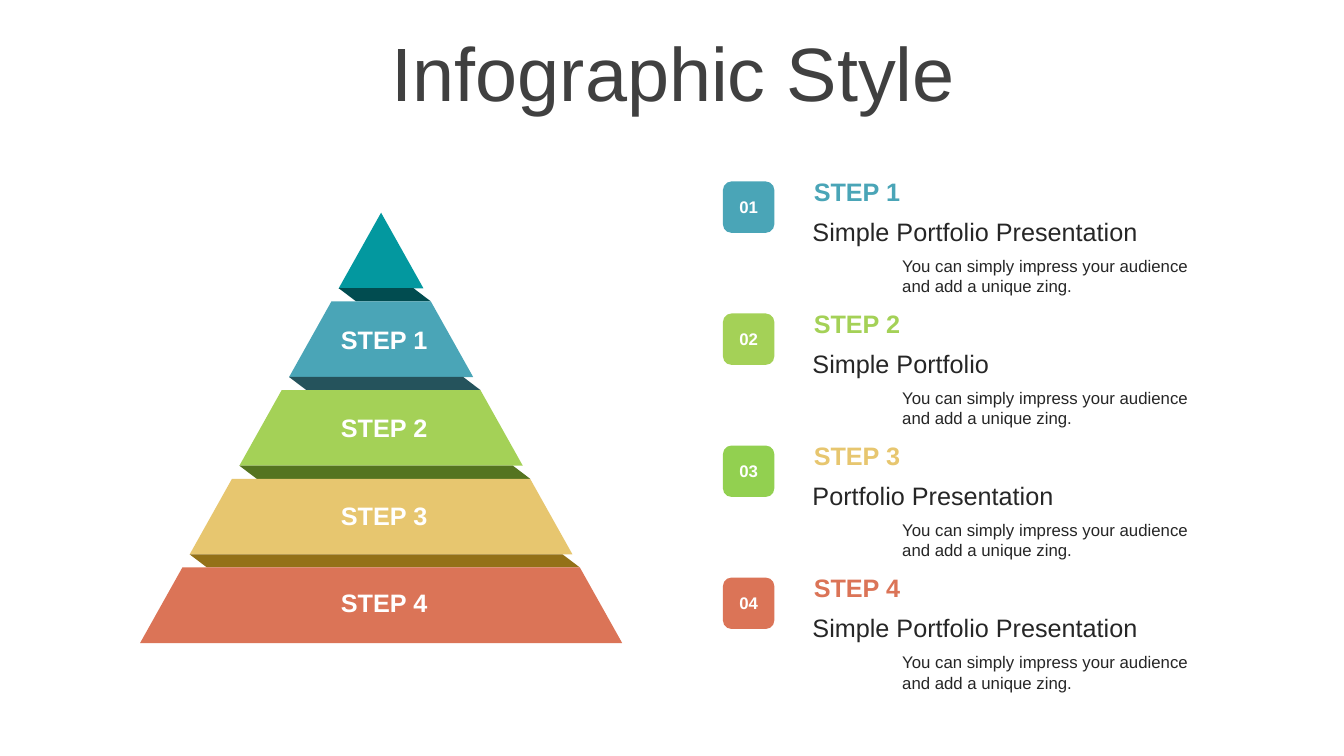
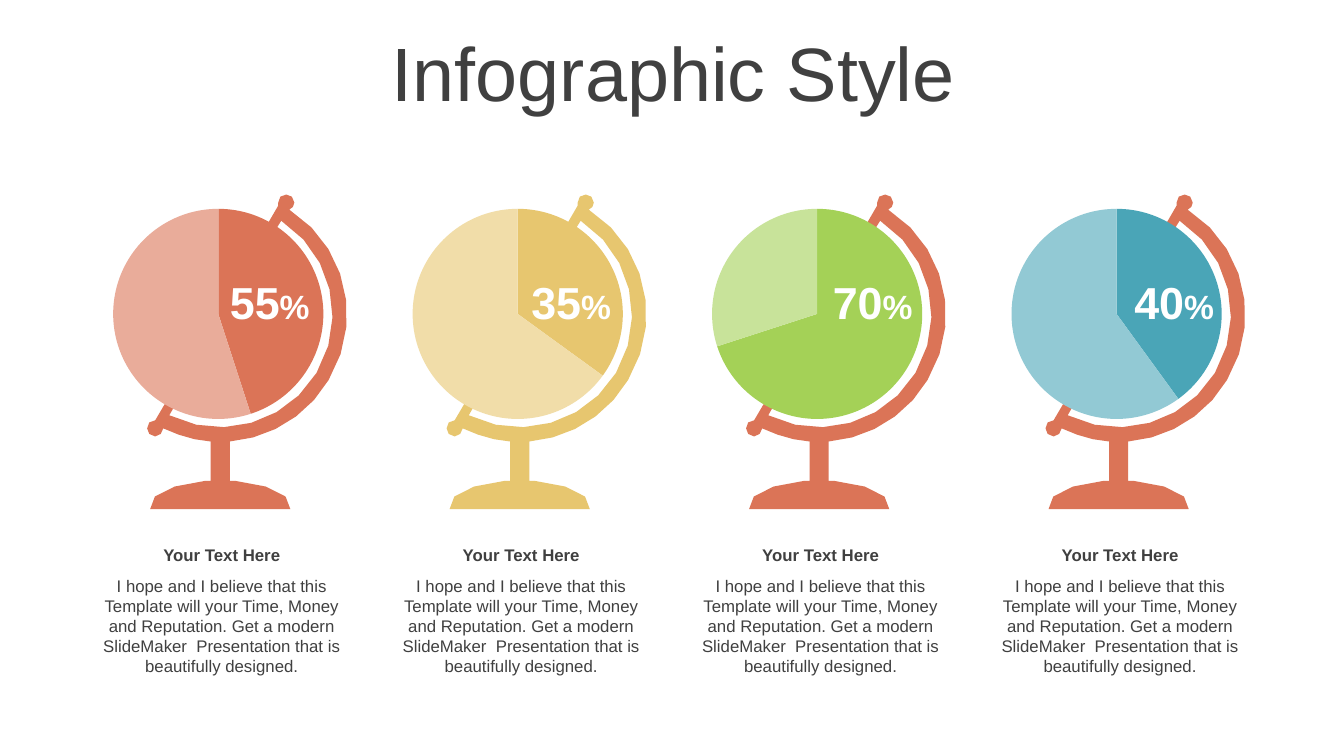
"""Build two infographic slides: a stepped pyramid and a row of globe pie charts."""
import math

import lxml.etree
import pptx
import pptx.chart.data
import pptx.dml.color
import pptx.enum.chart
import pptx.enum.shapes
import pptx.enum.text
import pptx.oxml
import pptx.oxml.ns
import pptx.util

Inches = pptx.util.Inches
Pt = pptx.util.Pt
SHAPE = pptx.enum.shapes.MSO_SHAPE
ALIGN = pptx.enum.text.PP_ALIGN
ANCHOR = pptx.enum.text.MSO_ANCHOR

FONT = "Arial"
COLORS = {
    "white": "FFFFFF", "title": "404040", "body": "262626",
    "teal": "03989F", "teal_dark": "014C50",
    "blue": "4AA5B7", "blue_dark": "25535C", "blue_light": "92C9D4",
    "green": "A4D157", "green_dark": "557420", "green_light": "C8E39A",
    "gold": "E7C66F", "gold_dark": "937118", "gold_light": "F1DDA9",
    "coral": "DB7457", "coral_light": "E9AC9A", "lime": "92D050",
}

TITLE = "Infographic Style"
TIERS = [
    ("", "teal", "teal_dark"),
    ("STEP 1", "blue", "blue_dark"),
    ("STEP 2", "green", "green_dark"),
    ("STEP 3", "gold", "gold_dark"),
    ("STEP 4", "coral", None),
]
STEPS = [
    ("01", "STEP 1", "Simple Portfolio Presentation", "blue", "blue"),
    ("02", "STEP 2", "Simple Portfolio", "green", "green"),
    ("03", "STEP 3", "Portfolio Presentation", "lime", "gold"),
    ("04", "STEP 4", "Simple Portfolio Presentation", "coral", "coral"),
]
STEP_NOTE = "You can simply impress your audience and add a unique zing."
GLOBES = [
    ("55", (45, 55), "coral", "coral_light", "coral"),
    ("35", (35, 65), "gold", "gold_light", "gold"),
    ("70", (70, 30), "green", "green_light", "coral"),
    ("40", (40, 60), "blue", "blue_light", "coral"),
]
GLOBE_HEADING = "Your Text Here"
GLOBE_NOTE = ("I hope and I believe that this Template will your Time, Money and Reputation. "
              "Get a modern SlideMaker  Presentation that is beautifully designed.")

PYRAMID_CENTER, PYRAMID_APEX, PYRAMID_SLOPE = 3.78, 2.11, 0.56
TIER_PITCH, TIER_HEIGHT = 0.88, 0.75
STEP_PITCH = 1.31
GLOBE_PITCH = 2.97

STAND = [
    (2.84, 1.93), (2.88, 1.93, 2.92, 1.96, 2.92, 2.01),
    (2.92, 2.04, 2.9, 2.07, 2.87, 2.08), (3.44, 2.44, 3.61, 3.19, 3.26, 3.77),
    (3.05, 4.13, 2.67, 4.35, 2.28, 4.38), (2.28, 4.77), (2.33, 4.77),
    (2.68, 4.8, 2.92, 4.92, 2.88, 5.05),
    (1.49, 5.05), (1.45, 4.92, 1.69, 4.8, 2.04, 4.77), (2.09, 4.77), (2.09, 4.38),
    (1.93, 4.37, 1.77, 4.32, 1.62, 4.25), (1.62, 4.29, 1.58, 4.33, 1.54, 4.33),
    (1.49, 4.33, 1.46, 4.29, 1.46, 4.25), (1.46, 4.2, 1.49, 4.17, 1.54, 4.17),
    (1.64, 4), (1.72, 4.05), (1.68, 4.12),
    (2.2, 4.38, 2.84, 4.2, 3.14, 3.7), (3.45, 3.18, 3.29, 2.51, 2.79, 2.19),
    (2.74, 2.27), (2.65, 2.23), (2.76, 2.04),
    (2.76, 2.01), (2.76, 1.96, 2.79, 1.93, 2.84, 1.93),
]


def rgb(name):
    return pptx.dml.color.RGBColor.from_string(COLORS[name])


def paint(shape, color):
    shape.shadow.inherit = False
    shape.fill.solid()
    shape.fill.fore_color.rgb = rgb(color)
    shape.line.fill.background()
    return shape


def write(para, text, size, color, bold=False, align=ALIGN.CENTER):
    para.text = text
    para.alignment = align
    para.font.name = FONT
    para.font.size = Pt(size)
    para.font.bold = bold
    para.font.color.rgb = rgb(color)


def clear_margins(frame):
    frame.margin_left = frame.margin_right = frame.margin_top = frame.margin_bottom = 0


def add_text(page, place, text, size, color, anchor=ANCHOR.TOP, **style):
    box = page.shapes.add_textbox(*map(Inches, place))
    box.text_frame.word_wrap = True
    box.text_frame.vertical_anchor = anchor
    para = box.text_frame.paragraphs[0]
    write(para, text, size, color, **style)
    return para


def add_outline(page, points, color):
    corners = [(Inches(x), Inches(y)) for x, y in points]
    builder = page.shapes.build_freeform(*corners[0])
    builder.add_line_segments(corners[1:], close=True)
    return paint(builder.convert_to_shape(), color)


def flatten(segments):
    points = [segments[0]]
    for segment in segments[1:]:
        if len(segment) == 2:
            points.append(segment)
            continue
        controls = [points[-1], segment[:2], segment[2:4], segment[4:]]
        pieces = 2 + int(3 * math.dist(controls[0], controls[3]))
        for piece in range(1, pieces + 1):
            t = piece / pieces
            weights = ((1 - t) ** 3, 3 * t * (1 - t) ** 2, 3 * t * t * (1 - t), t ** 3)
            points.append(tuple(sum(weight * control[axis] for weight, control in zip(weights, controls))
                                for axis in (0, 1)))
    return points


def add_page(deck):
    page = deck.slides.add_slide(deck.slide_layouts[6])
    para = add_text(page, (0.35, 0.37, 12.66, 0.79), TITLE, 54, "title", ANCHOR.MIDDLE)
    para.line_spacing = 0.9
    para.space_before = Pt(10)
    return page


def add_pyramid(page):
    def half_width(y):
        return (y - PYRAMID_APEX) * PYRAMID_SLOPE

    for index, (label, color, fold_color) in enumerate(TIERS):
        top = PYRAMID_APEX + index * TIER_PITCH
        bottom = top + TIER_HEIGHT
        upper, lower = half_width(top), half_width(bottom)
        corners = [(PYRAMID_CENTER - upper, top), (PYRAMID_CENTER + upper, top),
                   (PYRAMID_CENTER + lower, bottom), (PYRAMID_CENTER - lower, bottom)]
        add_outline(page, corners if upper else corners[1:], color)
        if fold_color:
            next_top = top + TIER_PITCH
            fold = page.shapes.add_shape(
                SHAPE.PARALLELOGRAM, Inches(PYRAMID_CENTER - lower), Inches(bottom),
                Inches(lower + half_width(next_top)), Inches(next_top - bottom))
            fold.adjustments[0] = 1.32
            fold._element.spPr.xfrm.set("flipH", "1")
            paint(fold, fold_color)
        if label:
            add_text(page, (3.27, 2.3 + 0.87 * index, 1.08, 0.4), label, 18, "white",
                     ANCHOR.MIDDLE, bold=True)


def add_steps(page):
    for index, (number, name, heading, badge_color, name_color) in enumerate(STEPS):
        top = 1.7 + index * STEP_PITCH
        badge = page.shapes.add_shape(SHAPE.ROUNDED_RECTANGLE, Inches(7.17), Inches(top + 0.1),
                                      Inches(0.51), Inches(0.51))
        paint(badge, badge_color)
        clear_margins(badge.text_frame)
        badge.text_frame.vertical_anchor = ANCHOR.MIDDLE
        write(badge.text_frame.paragraphs[0], number, 12, "white", bold=True)
        add_text(page, (7.96, top, 1.08, 0.4), name, 18, name_color, ANCHOR.MIDDLE, bold=True)
        para = add_text(page, (7.96, top + 0.45, 4.08, 0.34), heading, 18, "body", align=ALIGN.LEFT)
        para.line_spacing = 0.8
        add_text(page, (8.85, top + 0.79, 3.2, 0.5), STEP_NOTE, 12, "body", align=ALIGN.LEFT)


def add_pie(page, place, values, colors):
    data = pptx.chart.data.CategoryChartData()
    data.categories = ["1", "2"]
    data.add_series("Series 1", values)
    chart = page.shapes.add_chart(pptx.enum.chart.XL_CHART_TYPE.PIE, *map(Inches, place), data).chart
    chart.has_title = False
    chart.has_legend = False
    chart.font.name = FONT
    chart.font.size = Pt(10)
    plot = chart.plots[0]
    plot.vary_by_categories = True
    for index, color in enumerate(colors):
        look = plot.series[0].points[index].format
        look.fill.solid()
        look.fill.fore_color.rgb = rgb(color)
        look.line.fill.background()
    qn = pptx.oxml.ns.qn
    area = chart._chartSpace.find(".//" + qn("c:plotArea"))
    for old in area.findall(qn("c:layout")):
        area.remove(old)
    layout = lxml.etree.Element(qn("c:layout"))
    manual = lxml.etree.SubElement(layout, qn("c:manualLayout"))
    settings = [("layoutTarget", "inner"), ("xMode", "edge"), ("yMode", "edge"),
                ("x", "0.06"), ("y", "0.06"), ("w", "0.88"), ("h", "0.88")]
    for tag, value in settings:
        lxml.etree.SubElement(manual, qn("c:" + tag)).set("val", value)
    area.insert(0, layout)


def add_globes(page):
    outline = flatten(STAND)
    for index, (percent, values, color, light, stand_color) in enumerate(GLOBES):
        shift = index * GLOBE_PITCH
        add_text(page, (0.92 + shift, 5.36, 2.56, 0.3), GLOBE_HEADING, 12, "title", bold=True)
        add_text(page, (0.92 + shift, 5.66, 2.56, 1.11), GLOBE_NOTE, 12, "title")
        add_outline(page, [(x + shift, y) for x, y in outline], stand_color)
        add_pie(page, (0.97 + shift, 1.93, 2.39, 2.37), values, (color, light))
        para = add_text(page, (2.1 + 2.99 * index, 2.73, 1.15, 0.54), percent, 32, "white", bold=True)
        clear_margins(page.shapes[-1].text_frame)
        para.runs[0].font.size = Pt(32)
        sign = para.add_run()
        sign.text = "%"
        sign.font.size = Pt(24)


def main():
    deck = pptx.Presentation()
    deck.slide_width, deck.slide_height = Inches(13.33), Inches(7.5)
    pyramid_page = add_page(deck)
    add_pyramid(pyramid_page)
    add_steps(pyramid_page)
    add_globes(add_page(deck))
    deck.save("out.pptx")


if __name__ == "__main__":
    main()
